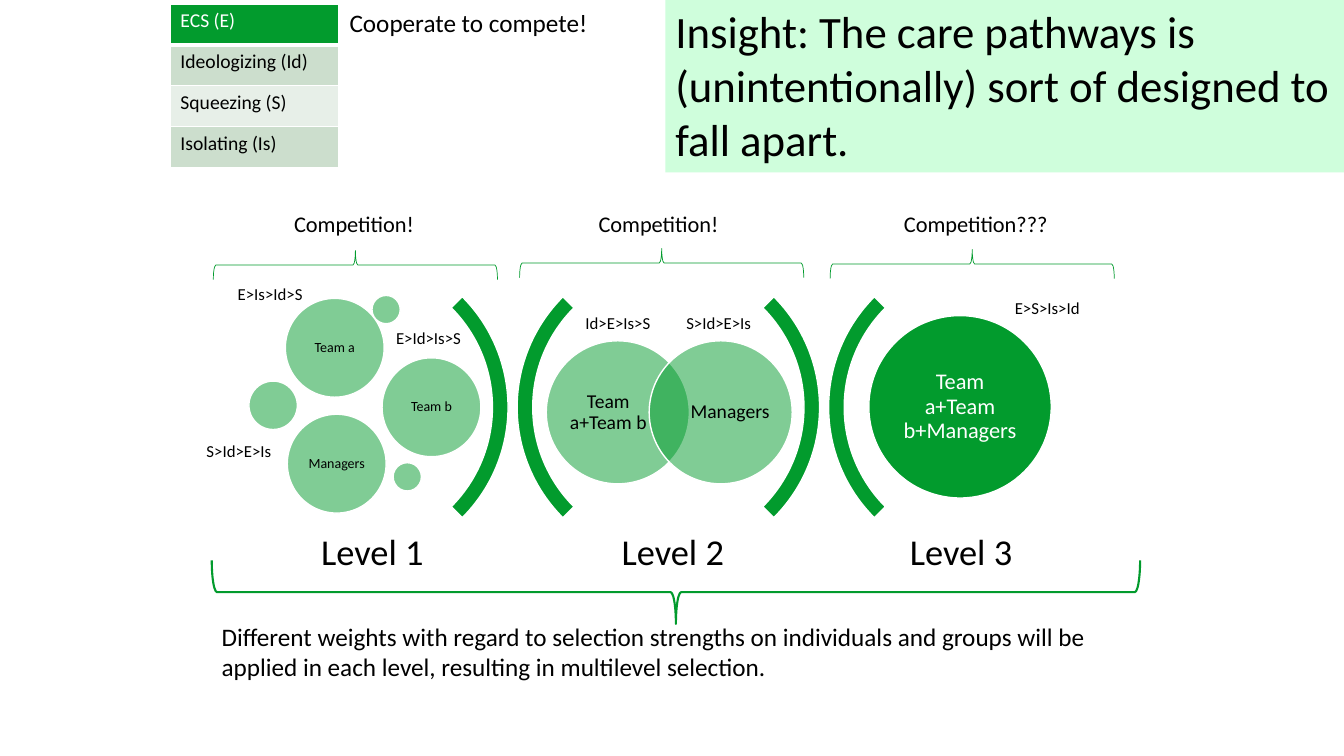
import dataclasses

import lxml.etree
import pptx
import pptx.dml.color
import pptx.enum.shapes
import pptx.enum.text
import pptx.oxml.ns
import pptx.util

Pt = pptx.util.Pt
SHAPE = pptx.enum.shapes.MSO_SHAPE
ALIGN = pptx.enum.text.PP_ALIGN
ANCHOR = pptx.enum.text.MSO_ANCHOR
AUTOSIZE = pptx.enum.text.MSO_AUTO_SIZE
qn = pptx.oxml.ns.qn


@dataclasses.dataclass(frozen=True)
class Theme:
    font: str = "Calibri"
    green: str = "029B2D"
    mint: str = "74FD9A"
    dark_band: str = "CCDECD"
    light_band: str = "E7EFE8"
    white: str = "FFFFFF"
    black: str = "000000"
    insight: int = 32
    level: int = 26
    body: int = 18
    heading: int = 16
    pair: int = 14
    weight: int = 12
    team: int = 10


class Slide:
    def __init__(self, theme, slide):
        self.theme = theme
        self.slide = slide

    def rgb(self, colour):
        return pptx.dml.color.RGBColor.from_string(colour)

    def add_run(self, frame, text, size, colour=None, align=ALIGN.LEFT, spacing=1.0):
        paragraph = frame.paragraphs[0]
        paragraph.alignment = align
        paragraph.line_spacing = spacing
        run = paragraph.add_run()
        run.text = text
        run.font.name = self.theme.font
        run.font.size = Pt(size)
        run.font.bold = False
        run.font.color.rgb = self.rgb(colour or self.theme.black)

    def paint(self, shape, colour, opacity=100):
        shape.fill.solid()
        shape.fill.fore_color.rgb = self.rgb(colour)
        if opacity < 100:
            tone = shape.element.spPr.find(qn("a:solidFill"))[0]
            lxml.etree.SubElement(tone, qn("a:alpha"), val=str(opacity * 1000))

    def title(self, text, left, top, width, height):
        title = self.slide.shapes.title
        title.left, title.top, title.width, title.height = map(Pt, (left, top, width, height))
        self.paint(title, self.theme.mint, 34)
        title.text_frame.word_wrap = True
        title.text_frame.auto_size = AUTOSIZE.NONE
        title.text_frame.vertical_anchor = ANCHOR.TOP
        self.add_run(title.text_frame, text, self.theme.insight)

    def text(self, text, size, left, top, width, height, wrap=True):
        frame = self.slide.shapes.add_textbox(*map(Pt, (left, top, width, height))).text_frame
        frame.word_wrap = wrap
        frame.auto_size = AUTOSIZE.SHAPE_TO_FIT_TEXT
        self.add_run(frame, text, size)

    def level_name(self, text, left):
        frame = self.slide.shapes.add_textbox(Pt(left), Pt(373), Pt(169.2), Pt(44.6)).text_frame
        frame.word_wrap = True
        frame.vertical_anchor = ANCHOR.MIDDLE
        self.add_run(frame, text, self.theme.level, align=ALIGN.CENTER, spacing=0.9)

    def shape(self, kind, left, top, width, height, rotation=0):
        shape = self.slide.shapes.add_shape(kind, *map(Pt, (left, top, width, height)))
        shape.shadow.inherit = False
        shape.rotation = rotation
        return shape

    def outline(self, shape, colour, weight):
        shape.line.color.rgb = self.rgb(colour)
        shape.line.width = Pt(weight)

    def arc(self, left, rotation):
        arc = self.shape(SHAPE.BLOCK_ARC, left, 179.3, 223.2, 223.2, rotation)
        for index, value in enumerate((135, 189, 0.05)):
            arc.adjustments[index] = value
        self.paint(arc, self.theme.green)
        self.outline(arc, self.theme.white, 1)

    def brace(self, kind, left, top, width, height, weight):
        brace = self.shape(kind, left, top, width, height, 270)
        brace.fill.background()
        self.outline(brace, self.theme.green, weight)

    def circle(self, left, top, size, text="", text_size=10, insets=(0, 0), opacity=50):
        circle = self.shape(SHAPE.OVAL, left, top, size, size)
        self.paint(circle, self.theme.green, opacity)
        self.outline(circle, self.theme.white, 1)
        if text:
            frame = circle.text_frame
            frame.word_wrap = True
            frame.vertical_anchor = ANCHOR.MIDDLE
            frame.margin_left, frame.margin_right = map(Pt, insets)
            frame.margin_top = frame.margin_bottom = 0
            colour = self.theme.white if opacity == 100 else self.theme.black
            self.add_run(frame, text, text_size, colour, ALIGN.CENTER, 0.9)

    def border(self, cell, edges):
        for index, (edge, weight) in enumerate(edges.items()):
            line = lxml.etree.Element(qn(f"a:{edge}"), w=str(Pt(weight)))
            fill = lxml.etree.SubElement(line, qn("a:solidFill"))
            lxml.etree.SubElement(fill, qn("a:srgbClr"), val=self.theme.white)
            cell._tc.get_or_add_tcPr().insert(index, line)

    def table(self, rows, left, top, width, row_height):
        table = self.slide.shapes.add_table(
            len(rows), 1, Pt(left), Pt(top), Pt(width), Pt(row_height * len(rows))
        ).table
        table.first_row = table.horz_banding = False
        for index, (text, fill, colour) in enumerate(rows):
            cell = table.cell(index, 0)
            cell.fill.solid()
            cell.fill.fore_color.rgb = self.rgb(fill)
            self.add_run(cell.text_frame, text, self.theme.pair, colour)
            above = 3 if index == 1 else 1
            below = 3 if index == 0 else 1
            self.border(cell, {"lnL": 1, "lnR": 1, "lnT": above, "lnB": below})


def main():
    deck = pptx.Presentation()
    deck.slide_width, deck.slide_height = Pt(960), Pt(540)
    theme = Theme()
    page = Slide(theme, deck.slides.add_slide(deck.slide_layouts[5]))

    page.title(
        "Insight: The care pathways is (unintentionally) sort of designed to fall apart.",
        475.2, -0.7, 485.3, 123.8,
    )
    page.text("Cooperate to compete!", theme.body, 242.6, 1.4, 202.3, 29)
    page.table(
        [
            ("ECS (E)", theme.green, theme.white),
            ("Ideologizing (Id)", theme.dark_band, theme.black),
            ("Squeezing (S)", theme.light_band, theme.black),
            ("Isolating (Is)", theme.dark_band, theme.black),
        ],
        121.7, 2.9, 120.2, 29.2,
    )

    for boundary in range(2):
        page.arc(139.7 + 222.5 * boundary, 90)
        page.arc(369.4 + 222.5 * boundary, 270)

    levels = [
        ("Level 1", 181.4, "Competition!", 203, 103.7, 243.4, 87.8),
        ("Level 2", 396, "Competition!", 420.5, 103.7, 462.2, 86.4),
        ("Level 3", 601.9, "Competition???", 638.6, 126.7, 684, 87.1),
    ]
    for name, name_left, contest, contest_left, contest_width, brace_left, brace_top in levels:
        page.level_name(name, name_left)
        page.text(contest, theme.heading, contest_left, 146.9, contest_width, 26.6)
        page.brace(SHAPE.RIGHT_BRACE, brace_left, brace_top, 20.9, 203, 0.5)

    for team, left, top in [
        ("Team a", 203.8, 213.1), ("Team b", 272.9, 255.6), ("Managers", 205.2, 295.9)
    ]:
        page.circle(left, top, 70.6, team, theme.team, (2.9, 2.9))
    for left, top, size in [(177.8, 272.2, 34.6), (265.7, 211, 20.2), (280.8, 330.5, 20.2)]:
        page.circle(left, top, size)
    page.circle(390.2, 243.4, 102.2, "Team a+Team b", theme.pair, (0, 13.5))
    page.circle(463.7, 243.4, 102.2, "Managers", theme.pair, (13.5, 0))
    page.circle(620.6, 225.4, 130.3, "Team a+Team b+Managers", theme.heading, (5, 5), 100)

    for weights, left, top in [
        ("E>Is>Id>S", 162.7, 199.4), ("E>Id>Is>S", 275.8, 230.4), ("S>Id>E>Is", 140.4, 311),
        ("Id>E>Is>S", 411.1, 219.6), ("S>Id>E>Is", 483.1, 219.6), ("E>S>Is>Id", 717.8, 208.8),
    ]:
        page.text(weights, theme.weight, left, top, 64.1, 21.6, wrap=False)

    page.brace(SHAPE.LEFT_BRACE, 460.1, 91.4, 45.4, 663.1, 1.5)
    page.text(
        "Different weights with regard to selection strengths on individuals and groups "
        "will be applied in each level, resulting in multilevel selection.",
        theme.body, 151.2, 439.9, 663.1, 51.1,
    )
    deck.save("out.pptx")


if __name__ == "__main__":
    main()
